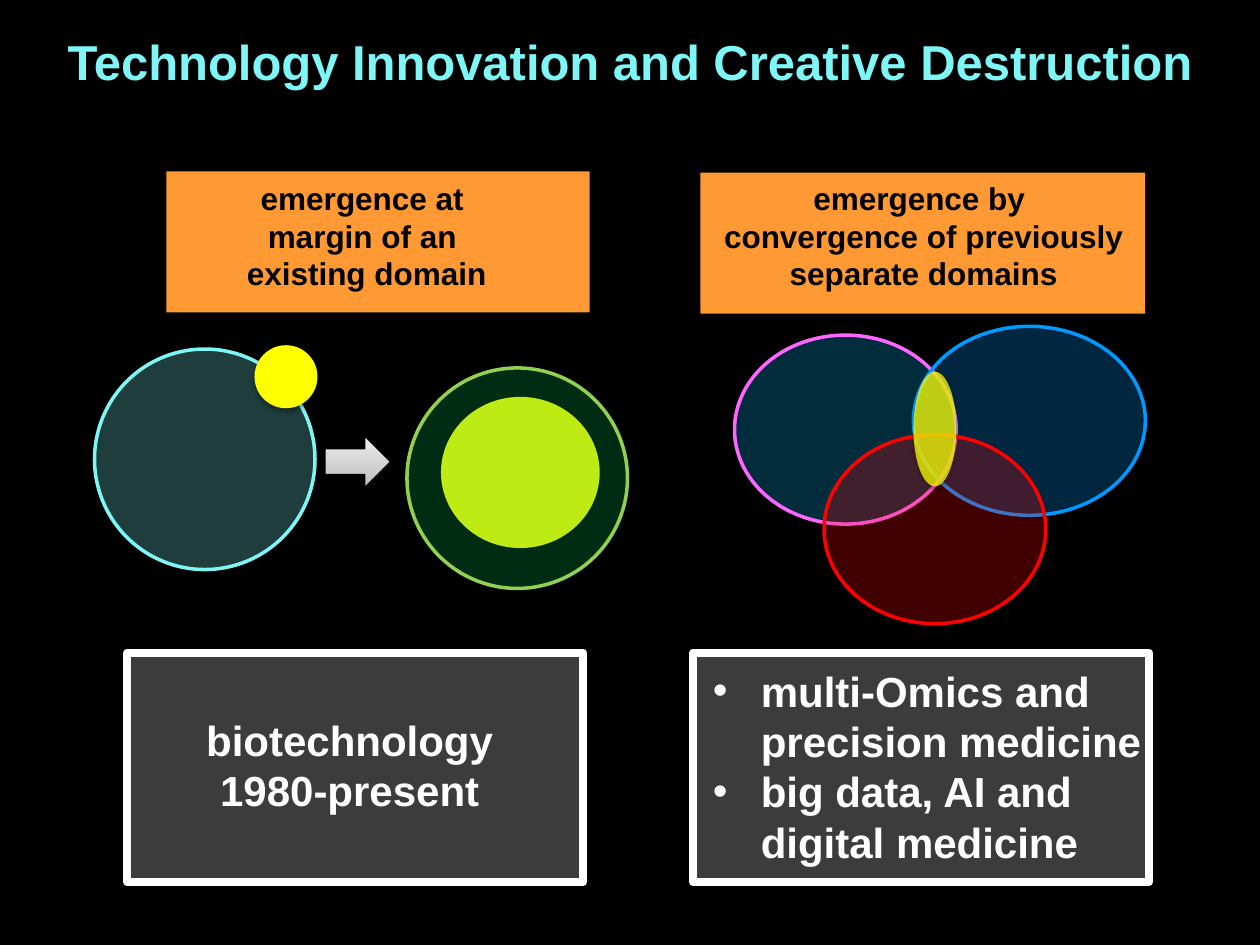
"""Build a slide on two ways that new technology domains emerge."""
from dataclasses import dataclass
from typing import Optional

from lxml import etree
from pptx import Presentation
from pptx.dml.color import RGBColor
from pptx.enum import shapes, text
from pptx.oxml import ns
from pptx.util import Inches, Pt

HUES = {
    "black": "000000", "white": "FFFFFF", "pale": "F2F2F2", "aqua": "7EF6F6",
    "orange": "FF9933", "yellow": "FFFF00", "green": "00B050", "lime": "92D050",
    "cyan": "00B0F0", "pink": "FF66FF", "blue": "0099FF", "red": "FF0000",
    "steel": "BDBDBD", "silver": "EEEEEE",
}
OVAL = shapes.MSO_SHAPE.OVAL
RECT = shapes.MSO_SHAPE.RECTANGLE
ARROW = shapes.MSO_SHAPE.RIGHT_ARROW


@dataclass
class Form:
    """A preset shape with its place and look."""
    kind: int
    box: tuple
    fill: str
    line: Optional[str] = None
    width: float = 2
    alpha: int = 100
    shade: int = 0


@dataclass
class Note:
    """A text box with its place and paragraphs."""
    box: tuple
    paras: list
    size: int
    hue: str
    bullet: bool = False
    inset: Optional[float] = None
    space: Optional[float] = None


def rgb(name: str) -> RGBColor:
    """Return a named colour."""
    return RGBColor.from_string(HUES[name])


def add(parent, tag: str, **attrs):
    """Append a drawing element and return it."""
    return etree.SubElement(parent, ns.qn(tag), attrs)


def cast(shape, alpha: int) -> None:
    """Give a shape a soft shadow below it."""
    shade = add(shape._element.spPr.find(ns.qn("a:effectLst")), "a:outerShdw",
                blurRad=str(Pt(3.1)), dist=str(Pt(1.8)), dir="5400000", rotWithShape="0")
    hue = add(shade, "a:srgbClr", val=HUES["black"])
    add(hue, "a:alpha", val=str(alpha * 1000))


def draw(tree, form: Form):
    """Draw one preset shape."""
    shape = tree.add_shape(form.kind, *map(Inches, form.box))
    shape.shadow.inherit = False
    shape.fill.solid()
    shape.fill.fore_color.rgb = rgb(form.fill)
    if form.alpha < 100:
        hue = shape._element.spPr.find(ns.qn("a:solidFill"))[0]
        add(hue, "a:alpha", val=str(form.alpha * 1000))
    if form.line:
        shape.line.color.rgb = rgb(form.line)
        shape.line.width = Pt(form.width)
    else:
        shape.line.fill.background()
    if form.shade:
        cast(shape, form.shade)
    return shape


def point(tree) -> None:
    """Draw the shaded arrow between the two stages."""
    arrow = draw(tree, Form(ARROW, (2.58, 3.46, 0.52, 0.41), "steel", "black", 0.75, shade=38))
    arrow.fill.gradient()
    arrow.fill.gradient_angle = 90
    for stop, name in zip(arrow.fill.gradient_stops, ("steel", "silver")):
        stop.color.rgb = rgb(name)


def write(tree, note: Note) -> None:
    """Write one text box, run by run."""
    frame = tree.add_textbox(*map(Inches, note.box)).text_frame
    frame.word_wrap = True
    frame.vertical_anchor = text.MSO_ANCHOR.TOP
    if note.inset is not None:
        frame.margin_left = frame.margin_right = Inches(note.inset)
        frame.margin_top = frame.margin_bottom = Inches(note.inset)
    for i, words in enumerate(note.paras):
        para = frame.add_paragraph() if i else frame.paragraphs[0]
        if note.bullet:
            props = para._p.get_or_add_pPr()
            props.set("marL", str(Inches(0.38)))
            props.set("indent", str(Inches(-0.38)))
            add(props, "a:buFont", typeface="Arial")
            add(props, "a:buChar", char="•")
        else:
            para.alignment = text.PP_ALIGN.CENTER
        if note.space:
            para.line_spacing = note.space
        for j, part in enumerate(words.split("\n")):
            if j:
                para.add_line_break()
            run = para.add_run()
            run.text = part
            run.font.name, run.font.size, run.font.bold = "Arial", Pt(note.size), True
            run.font.color.rgb = rgb(note.hue)


STAGES = [
    Form(OVAL, (3.5, 3.15, 1.26, 1.2), "yellow", shade=35),
    Form(OVAL, (3.23, 2.92, 1.75, 1.75), "green", "lime", alpha=25),
    Form(OVAL, (0.75, 2.77, 1.75, 1.75), "aqua", "aqua", alpha=25),
]
PANELS = [
    Form(RECT, (1.32, 1.36, 3.36, 1.12), "orange", shade=35),
    Form(RECT, (5.56, 1.37, 3.53, 1.12), "orange", shade=35),
    *(Form(RECT, (x, 5.18, 3.62, 1.82), "pale", "white", 4.5, 25, 38) for x in (5.5, 1.01)),
]
VENN = [
    Form(OVAL, (5.83, 2.66, 1.76, 1.5), "cyan", "pink", alpha=25),
    Form(OVAL, (7.25, 2.59, 1.84, 1.5), "blue", "blue", alpha=25),
    Form(OVAL, (6.54, 3.45, 1.76, 1.5), "red", "red", alpha=25),
]
SPOTS = [
    Form(OVAL, (2.02, 2.74, 0.5, 0.5), "yellow", shade=35),
    Form(OVAL, (7.25, 2.95, 0.34, 0.91), "yellow", alpha=75, shade=35),
]
NOTES = [
    Note((-0.04, 0.3, 10.08, 0.49), ["Technology Innovation and Creative Destruction"],
         28, "aqua", inset=0, space=0.9),
    Note((1.07, 1.37, 3.68, 1.01), ["emergence at ", "margin of an \nexisting domain"],
         18, "black"),
    Note((5.49, 1.37, 3.68, 1.01),
         ["emergence by ", "convergence of previously separate domains"], 18, "black"),
    Note((1.32, 5.62, 2.91, 0.91), ["biotechnology", "1980-present"], 24, "white"),
    Note((5.56, 5.23, 3.61, 1.72),
         ["multi-Omics and precision medicine", "big data, AI and digital medicine"],
         24, "white", bullet=True),
]


def main() -> None:
    """Build and save the slide."""
    deck = Presentation()
    deck.slide_width, deck.slide_height = Inches(10), Inches(7.5)
    slide = deck.slides.add_slide(deck.slide_layouts[6])
    slide.background.fill.solid()
    slide.background.fill.fore_color.rgb = rgb("black")
    tree = slide.shapes
    for form in STAGES + PANELS:
        draw(tree, form)
    for note in NOTES:
        write(tree, note)
    point(tree)
    group = tree.add_group_shape()
    for form in VENN:
        draw(group.shapes, form)
    for form in SPOTS:
        draw(tree, form)
    deck.save("out.pptx")


if __name__ == "__main__":
    main()
